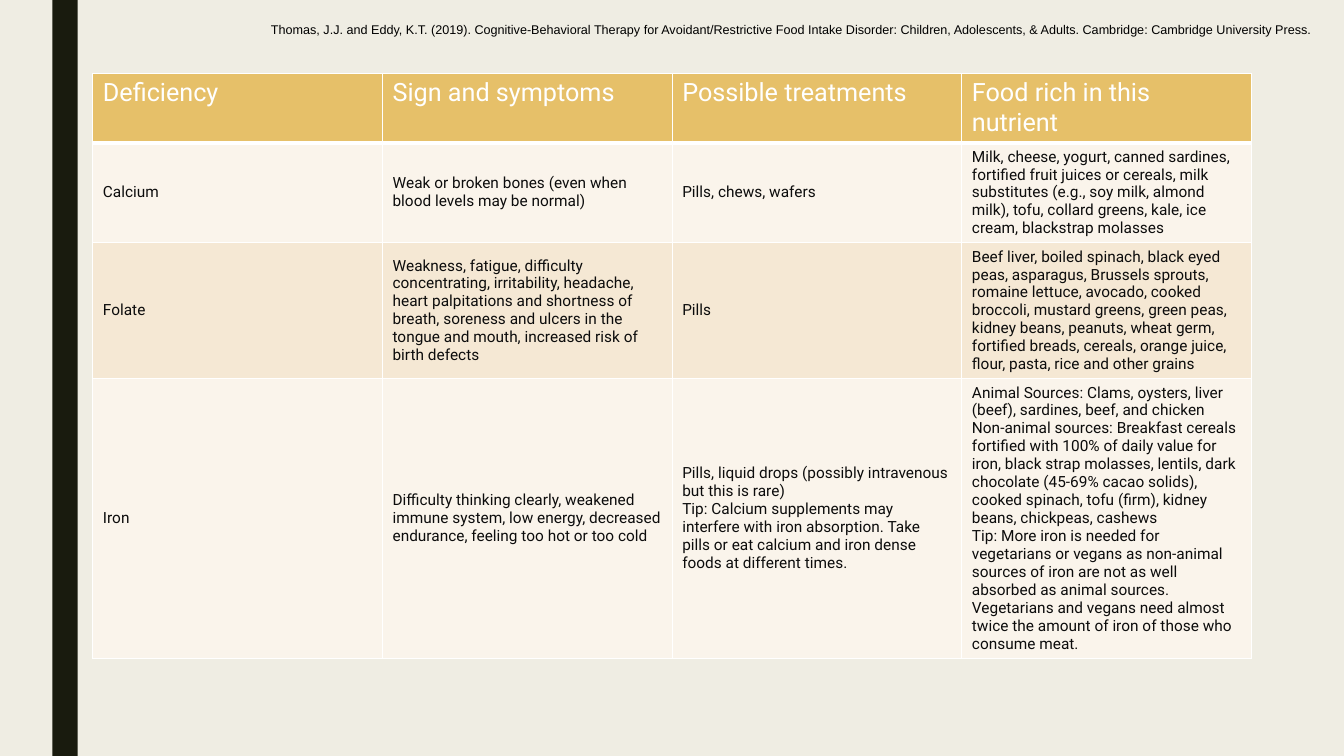
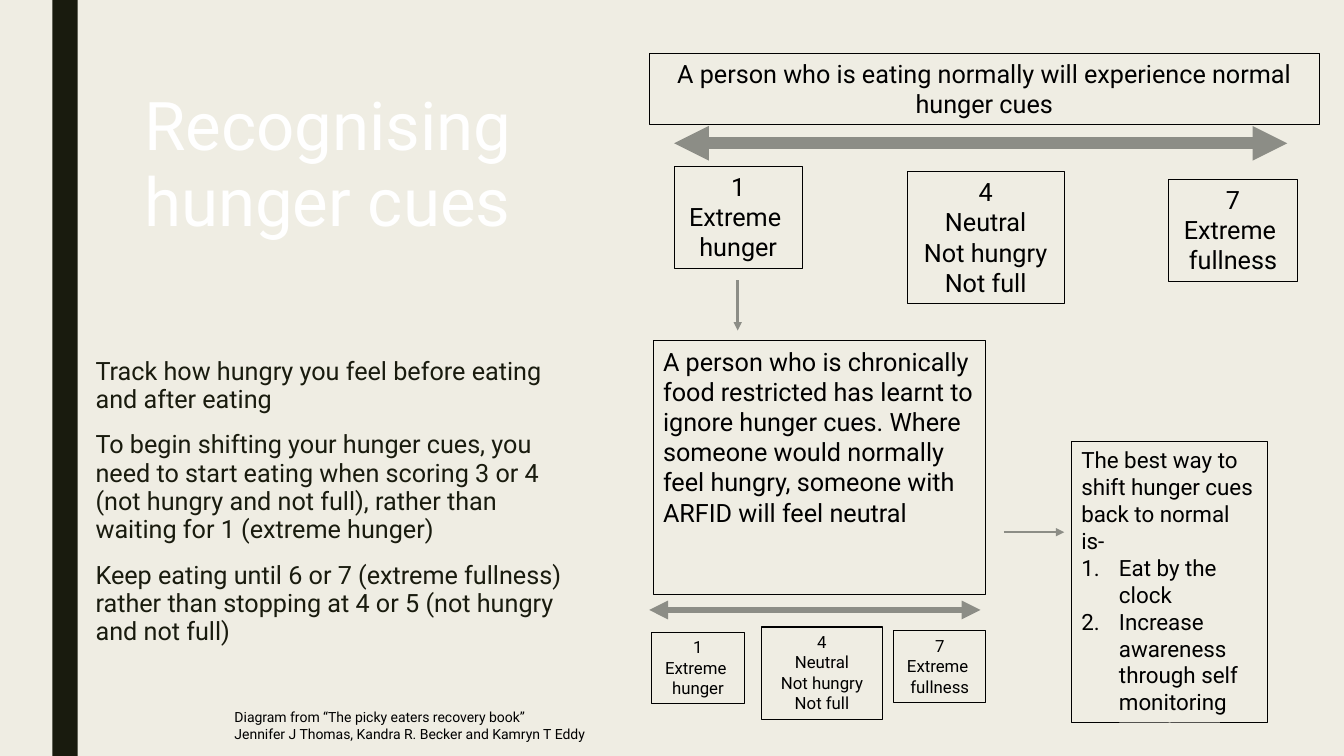
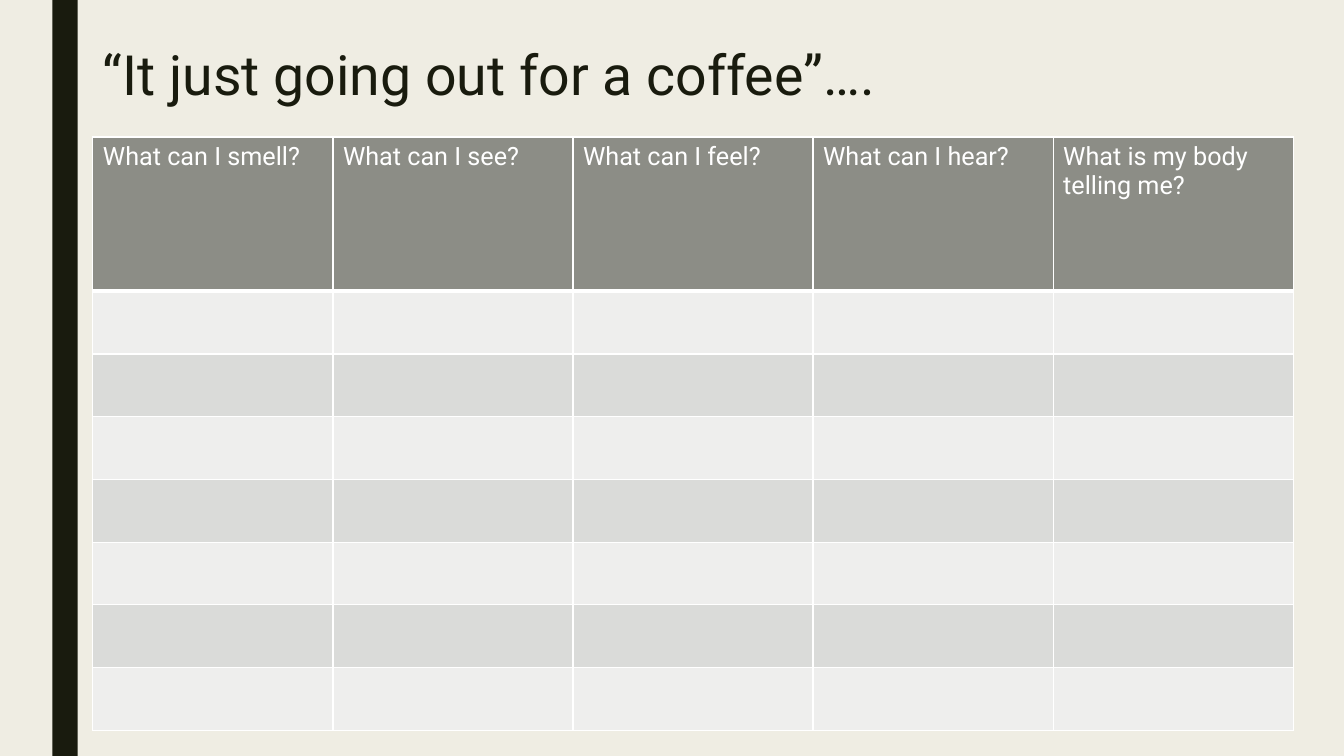
from lxml import etree
from pptx import Presentation
from pptx.dml.color import RGBColor as RGB
from pptx.enum.shapes import MSO_CONNECTOR as Link, MSO_SHAPE as Shape
from pptx.enum.text import MSO_ANCHOR as Anchor, MSO_AUTO_SIZE as Fit, PP_ALIGN as Align
from pptx.oxml.ns import qn
from pptx.util import Cm, Pt

HUES = {"page": "EFEDE3", "dark": "191B0E", "white": "FFFFFF", "black": "000000",
        "soft": "0C0C0C", "grey": "8C8D86", "gold": "E6C069",
        "sand": "F5E8D4", "cream": "FAF4EB", "ash": "DADBD9", "mist": "EEEEED"}
FONT = "Roboto"
LEFT = 2.34

SOURCE = ("Thomas, J.J. and Eddy, K.T. (2019). Cognitive-Behavioral Therapy for "
          "Avoidant/Restrictive Food Intake Disorder: Children, Adolescents, & Adults. "
          "Cambridge: Cambridge University Press.")
FOODS = [
    ["Deficiency", "Sign and symptoms", "Possible treatments", "Food rich in this nutrient"],
    ["Calcium",
     "Weak or broken bones (even when blood levels may be normal)",
     "Pills, chews, wafers",
     "Milk, cheese, yogurt, canned sardines, fortified fruit juices or cereals, milk "
     "substitutes (e.g., soy milk, almond milk), tofu, collard greens, kale, ice cream, "
     "blackstrap molasses"],
    ["Folate",
     "Weakness, fatigue, difficulty concentrating, irritability, headache, heart "
     "palpitations and shortness of breath, soreness and ulcers in the tongue and mouth, "
     "increased risk of birth defects",
     "Pills",
     "Beef liver, boiled spinach, black eyed peas, asparagus, Brussels sprouts, romaine "
     "lettuce, avocado, cooked broccoli, mustard greens, green peas, kidney beans, peanuts, "
     "wheat germ, fortified breads, cereals, orange juice, flour, pasta, rice and other grains"],
    ["Iron",
     "Difficulty thinking clearly, weakened immune system, low energy, decreased endurance, "
     "feeling too hot or too cold",
     ["Pills, liquid drops (possibly intravenous but this is rare)",
      "Tip: Calcium supplements may interfere with iron absorption. Take pills or eat calcium "
      "and iron dense foods at different times."],
     ["Animal Sources: Clams, oysters, liver (beef), sardines, beef, and chicken",
      "Non-animal sources: Breakfast cereals fortified with 100% of daily value for iron, black "
      "strap molasses, lentils, dark chocolate (45-69% cacao solids), cooked spinach, tofu "
      "(firm), kidney beans, chickpeas, cashews",
      "Tip: More iron is needed for vegetarians or vegans as non-animal sources of iron are not "
      "as well absorbed as animal sources. Vegetarians and vegans need almost twice the amount "
      "of iron of those who consume meat."]],
]

ADVICE = [
    "Track how hungry you feel before eating and after eating",
    "To begin shifting your hunger cues, you need to start eating when scoring 3 or 4 (not "
    "hungry and not full), rather than waiting for 1 (extreme hunger)",
    "Keep eating until 6 or 7 (extreme fullness) rather than stopping at 4 or 5 (not hungry "
    "and not full)",
]
NORMAL = "A person who is eating normally will experience normal hunger cues"
LIMITED = ("A person who is chronically food restricted has learnt to ignore hunger cues. Where "
           "someone would normally feel hungry, someone with ARFID will feel neutral")
BEST = "The best way to shift hunger cues back to normal is-"
STEPS = ["Eat by the clock", "Increase awareness through self monitoring"]
SCORES = [["1", "Extreme ", "hunger"],
          ["4", "Neutral", "Not hungry", "Not full"],
          ["7", "Extreme ", "fullness"]]
SCALES = [  # text size, then one place per score
    (18, [(16.99, 4.19, 3.23, 2.57), (22.86, 4.32, 3.96, 3.33), (29.46, 4.52, 3.23, 2.57)]),
    (12, [(16.41, 15.93, 2.36, 1.8), (19.18, 15.8, 3.07, 2.34), (22.53, 15.9, 2.31, 1.8)]),
]
ARROWS = [  # start, end, width, arrowheads
    ((16.99, 3.61), (32.44, 3.61), 8.25, ("headEnd", "tailEnd")),
    ((16.36, 15.37), (24.71, 15.37), 4.5, ("headEnd", "tailEnd")),
    ((18.59, 7.06), (18.59, 8.33), 1.75, ("tailEnd",)),
    ((25.3, 13.41), (26.82, 13.41), 1.75, ("tailEnd",)),
]
CREDIT = ["Diagram from “The picky eaters recovery book”",
          "Jennifer J Thomas, Kandra R. Becker and Kamryn T Eddy"]

SENSES = [["What can I smell?", "What can I see?", "What can I feel?", "What can I hear?",
           "What is my body telling me?"]] + [[""] * 5 for _ in range(7)]


def hue(name):
    return RGB.from_string(HUES[name])


def cms(nums):
    return [Cm(n) for n in nums]


def write(frame, text, size=18, color="black", font=FONT, align=Align.LEFT, space=None,
          before=0, after=0, mark=None, indent=0, plain=0):
    """Fill a text frame; mark is (tag, attribute, value), skipped for the first plain lines."""
    lines = [text] if isinstance(text, str) else text
    for i, line in enumerate(lines):
        par = frame.add_paragraph() if i else frame.paragraphs[0]
        if mark and i >= plain:
            tag, key, val = mark
            props = par._p.get_or_add_pPr()
            props.set("marL", str(Cm(indent)))
            props.set("indent", str(-Cm(indent)))
            etree.SubElement(props, qn(tag)).set(key, val)
        par.alignment = align
        if space:
            par.line_spacing = space
        if i:
            par.space_before = Pt(before)
        par.space_after = Pt(after)
        run = par.add_run()
        run.text = line
        run.font.name, run.font.size, run.font.bold = font, Pt(size), False
        run.font.color.rgb = hue(color)


def page(deck, title=None, place=None, **fmt):
    slide = deck.slides.add_slide(deck.slide_layouts[5 if title else 6])
    band = slide.shapes.add_shape(Shape.RECTANGLE, *cms((1.32, 0, 0.64, 19.05)))
    band.shadow.inherit = False
    band.fill.solid()
    band.fill.fore_color.rgb = hue("dark")
    band.line.fill.background()
    if title:
        head = slide.shapes.title
        head.left, head.top, head.width, head.height = cms(place)
        frame = head.text_frame
        frame.word_wrap, frame.auto_size = True, Fit.NONE
        frame.vertical_anchor = Anchor.MIDDLE
        write(frame, title, **fmt)
    return slide


def box(slide, place, text, edge=False, anchor=Anchor.TOP, **fmt):
    item = slide.shapes.add_textbox(*cms(place))
    if edge:
        item.line.color.rgb = hue("black")
        item.line.width = Pt(0.75)
    frame = item.text_frame
    frame.word_wrap, frame.vertical_anchor = True, anchor
    write(frame, text, **fmt)


def arrow(slide, start, end, width, heads):
    line = slide.shapes.add_connector(Link.STRAIGHT, *cms(start + end))
    line.line.color.rgb = hue("grey")
    line.line.width = Pt(width)
    for tag in heads:
        etree.SubElement(line.line._get_or_add_ln(), qn("a:" + tag)).set("type", "triangle")
    etree.SubElement(line.element.spPr, qn("a:effectLst"))


def rule(cell, base):
    """Draw white borders, with the bottom one base points wide."""
    props = cell._tc.get_or_add_tcPr()
    for side, width in zip("LRTB", (1, 1, 1, base)):
        edge = etree.SubElement(props, qn("a:ln" + side), w=str(Pt(width)))
        fill = etree.SubElement(edge, qn("a:solidFill"))
        etree.SubElement(fill, qn("a:srgbClr"), val=HUES["white"])


def grid(slide, top, wide, rows, tall, fills):
    """Add a table; fills names the header, odd and even row colours."""
    count = len(rows[0])
    table = slide.shapes.add_table(len(rows), count, Cm(LEFT), Cm(top),
                                   Cm(wide * count), Cm(sum(tall))).table
    table.first_row = table.horz_banding = False
    for col in table.columns:
        col.width = Cm(wide)
    for r, row in enumerate(rows):
        table.rows[r].height = Cm(tall[r])
        for c, text in enumerate(row):
            cell = table.cell(r, c)
            rule(cell, 1 if r else 3)
            cell.fill.solid()
            cell.fill.fore_color.rgb = hue(fills[2 - r % 2 if r else 0])
            cell.vertical_anchor = Anchor.MIDDLE if r else Anchor.TOP
            if text:
                write(cell.text_frame, text, size=11 if r else 18,
                      color="soft" if r else "white")


def main():
    deck = Presentation()
    deck.slide_width, deck.slide_height = Cm(33.87), Cm(19.05)
    back = deck.slide_master.background.fill
    back.solid()
    back.fore_color.rgb = hue("page")

    slide = page(deck)
    grid(slide, 1.85, 7.3, FOODS, [1.74, 2.5, 3.42, 7], ("gold", "cream", "sand"))
    box(slide, (6.58, 0.43, 27.18, 1.42), SOURCE, size=9, font="Arial")

    slide = page(deck, "Recognising hunger cues", (3.38, 2.2, 10.4, 3.94),
                 size=48, color="white", space=0.94)
    box(slide, (1.09, 8.33, 13.84, 8.64), ADVICE, anchor=Anchor.MIDDLE, color="dark",
        space=0.94, before=10, after=2, mark=("a:buChar", "char", "■"), indent=1.07)
    box(slide, (16.36, 1.35, 16.89, 1.8), NORMAL, edge=True, align=Align.CENTER)
    box(slide, (16.46, 8.59, 8.38, 6.4), LIMITED, edge=True)
    box(slide, (27, 11.13, 4.95, 7.09), [BEST] + STEPS, edge=True, size=16, plain=1,
        mark=("a:buAutoNum", "type", "arabicPeriod"), indent=0.95)
    for size, places in SCALES:
        for place, score in zip(places, SCORES):
            box(slide, place, score, edge=True, size=size, align=Align.CENTER)
    for item in ARROWS:
        arrow(slide, *item)
    box(slide, (5.66, 17.73, 10.11, 1.12), CREDIT, size=10)

    slide = page(deck, "“It just going out for a coffee”….", (LEFT, 1.02, 29.21, 1.88),
                 size=39.6, color="dark", space=0.89)
    grid(slide, 3.45, 6.05, SENSES, [3.89] + [1.58] * 7, ("grey", "mist", "ash"))

    deck.save("out.pptx")


if __name__ == "__main__":
    main()
